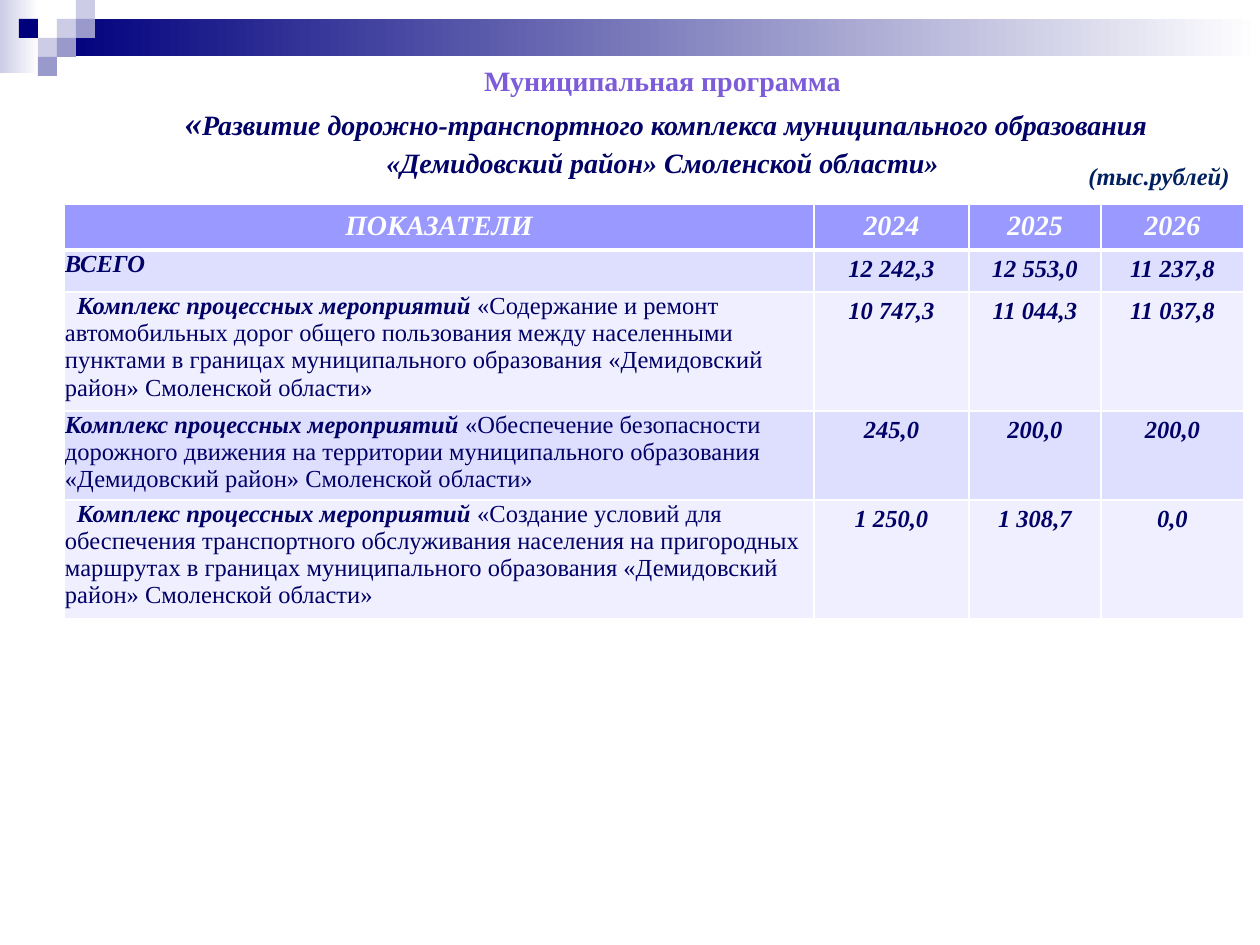
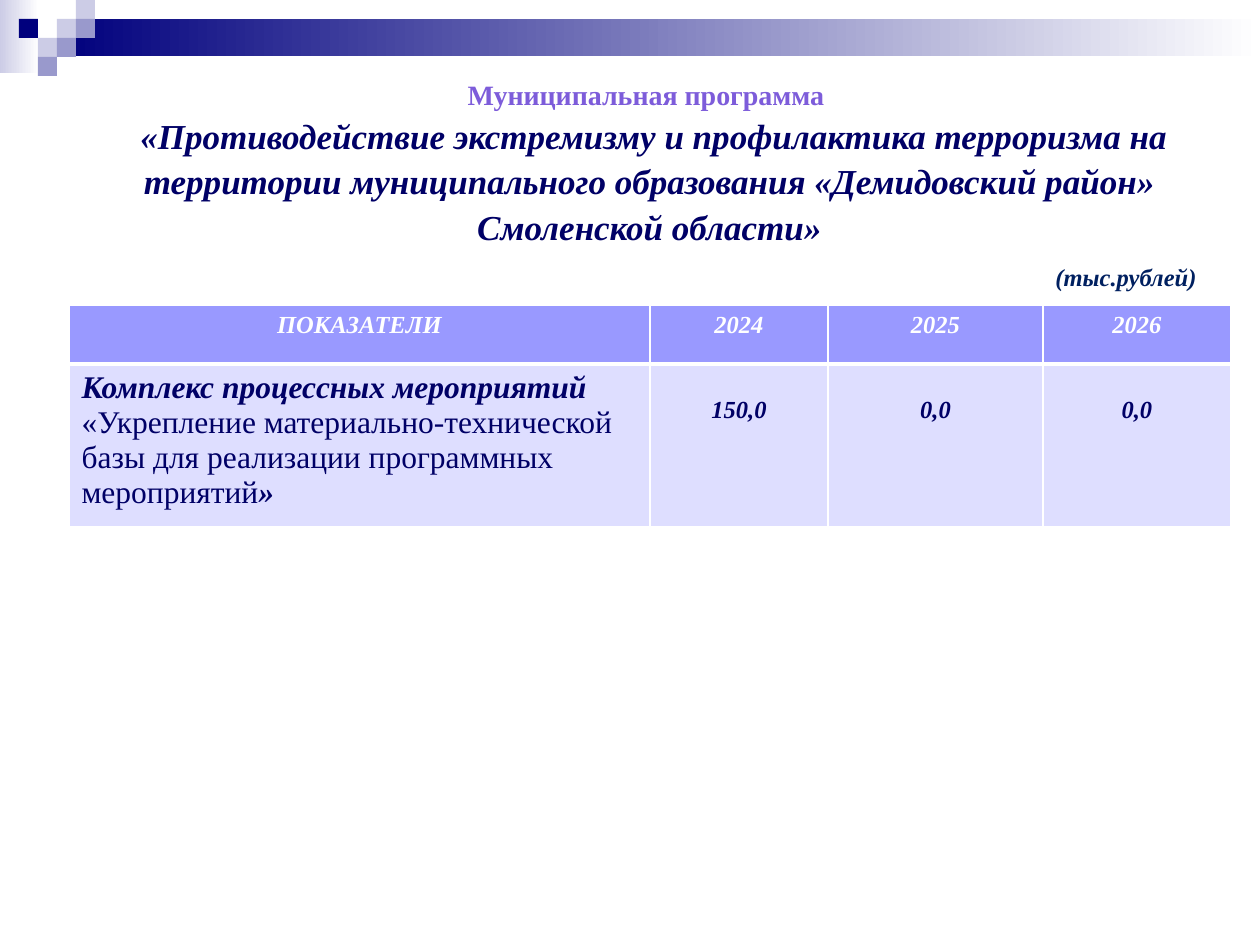
import pptx
import pptx.util
import pptx.dml.color
import pptx.enum.shapes
import pptx.enum.text
import pptx.oxml.ns
import lxml.etree

HUES = {
    "navy": "00007D", "pale": "CCCCE6", "mid": "9999CC", "white": "FFFFFF",
    "violet": "7D5CDA", "ink": "000066", "unit": "002060",
    "head": "9999FF", "odd": "DEDEFF", "even": "EFEFFF",
}
FONT = "Times New Roman"
YEARS = ["2024", "2025", "2026"]
KIND = "Комплекс процессных мероприятий "
CELL = 19
TILES = [(3, 1, "pale"), (4, 0, "pale"), (4, 1, "mid"), (2, 2, "pale"),
         (1, 1, "navy"), (3, 2, "mid"), (2, 3, "mid")]
CENTER = pptx.enum.text.PP_ALIGN.CENTER


def px(num):
    """Turn px into EMU."""
    return pptx.util.Emu(round(num * 914400 / 126))


def rgb(name):
    """Look up a colour by name."""
    return pptx.dml.color.RGBColor.from_string(HUES[name])


def write(par, text, size, hue, bold=True, slant=True):
    """Add one formatted run to a paragraph."""
    run = par.add_run()
    run.text = text
    font = run.font
    font.name, font.size = FONT, pptx.util.Pt(size)
    font.bold, font.italic = bold, slant
    font.color.rgb = rgb(hue)


def block(slide, left, top, wide, high, hue, fade=False):
    """Draw a plain or fading rectangle."""
    form = pptx.enum.shapes.MSO_SHAPE.RECTANGLE
    shape = slide.shapes.add_shape(form, px(left), px(top), px(wide), px(high))
    shape.shadow.inherit = False
    shape.line.fill.background()
    if fade:
        shape.fill.gradient()
        shape.fill.gradient_angle = 0
        for stop, name in zip(shape.fill.gradient_stops, (hue, "white")):
            stop.color.rgb = rgb(name)
    else:
        shape.fill.solid()
        shape.fill.fore_color.rgb = rgb(hue)


def band(slide):
    """Draw the top band with its mosaic."""
    block(slide, 0, 0, 39, 73, "pale", True)
    block(slide, 57, 19, 1203, 37, "navy", True)
    for col, row, hue in TILES:
        block(slide, col * CELL, row * CELL, CELL, CELL, hue)


def title(slide, left, top, wide, high, parts):
    """Fill the title with the heading and the programme name."""
    shape = slide.shapes.title
    shape.left, shape.top = px(left), px(top)
    shape.width, shape.height = px(wide), px(high)
    frame = shape.text_frame
    frame.word_wrap = True
    frame.auto_size = pptx.enum.text.MSO_AUTO_SIZE.NONE
    frame.vertical_anchor = pptx.enum.text.MSO_ANCHOR.TOP
    frame.margin_top = frame.margin_bottom = px(6)
    write(frame.paragraphs[0], "Муниципальная программа ", 16, "violet", slant=False)
    name = frame.add_paragraph()
    for text, size in parts:
        write(name, text, size, "ink")
    for par in frame.paragraphs:
        par.alignment = CENTER
        par.line_spacing = 1.08
        par.space_before = pptx.util.Pt(0)


def unit(slide, left, top):
    """Place the unit label."""
    box = slide.shapes.add_textbox(px(left), px(top), px(168), px(43))
    box.text_frame.word_wrap = False
    write(box.text_frame.paragraphs[0], "(тыс.рублей)", 14, "unit")


def edge(cell, base):
    """Give a cell its white borders."""
    props = cell._tc.get_or_add_tcPr()
    name = pptx.oxml.ns.qn
    for side in "LRTB":
        width = base if side == "B" else 1
        line = lxml.etree.SubElement(props, name("a:ln" + side), w=str(width * 12700))
        fill = lxml.etree.SubElement(line, name("a:solidFill"))
        lxml.etree.SubElement(fill, name("a:srgbClr"), val=HUES["white"])


def paint(cell, row):
    """Set the borders and fill of a cell by its row."""
    edge(cell, 1 if row else 3)
    cell.fill.solid()
    hue = ("odd" if row % 2 else "even") if row else "head"
    cell.fill.fore_color.rgb = rgb(hue)


def label(cell, parts, size, indent, flush):
    """Write a row label, bold and plain by turns."""
    par = cell.text_frame.paragraphs[0]
    for num, text in enumerate(parts):
        strong = num % 2 == 0
        write(par, text, size, "ink", strong, strong)
    if indent:
        par._p.get_or_add_pPr().set("indent", str(px(indent)))
    if flush:
        cell.margin_left = cell.margin_right = cell.margin_top = px(1)
        cell.margin_bottom = 0


def grid(slide, left, top, cols, highs, rows, sizes, flush=False, drop=6):
    """Build the table of indicators by year."""
    head, main = sizes
    frame = slide.shapes.add_table(len(highs), len(cols), px(left), px(top),
                                   px(sum(cols)), px(sum(highs)))
    table = frame.table
    for col, wide in zip(table.columns, cols):
        col.width = px(wide)
    for row, high in zip(table.rows, highs):
        row.height = px(high)
    for cell, text in zip(table.rows[0].cells, ["ПОКАЗАТЕЛИ"] + YEARS):
        paint(cell, 0)
        par = cell.text_frame.paragraphs[0]
        par.alignment = CENTER
        write(par, text, head, "white")
    for num, (parts, indent, sums) in enumerate(rows, 1):
        first, *rest = table.rows[num].cells
        paint(first, num)
        label(first, parts, main, indent, flush)
        for cell, text in zip(rest, sums):
            paint(cell, num)
            cell.margin_top = px(drop)
            par = cell.text_frame.paragraphs[0]
            par.alignment = CENTER
            write(par, text, 14, "ink")


def page(deck):
    """Add a slide with the shared band."""
    slide = deck.slides.add_slide(deck.slide_layouts[5])
    band(slide)
    return slide


def roads(deck):
    """Build the slide on roads and transport."""
    slide = page(deck)
    title(slide, 125, 55, 1082, 123, [
        ("«", 20),
        ("Развитие дорожно-транспортного комплекса муниципального образования "
         "«Демидовский район» Смоленской области» ", 16)])
    rows = [
        (["ВСЕГО"], 0, ["12 242,3", "12 553,0", "11 237,8"]),
        ([KIND, "«Содержание и ремонт автомобильных дорог общего пользования "
          "между населенными пунктами в границах муниципального образования "
          "«Демидовский район» Смоленской области»"], 12,
         ["10 747,3", "11 044,3", "11 037,8"]),
        ([KIND, "«Обеспечение безопасности дорожного движения на территории "
          "муниципального образования «Демидовский район» Смоленской области»"], 0,
         ["245,0", "200,0", "200,0"]),
        ([KIND, "«Создание условий для обеспечения транспортного обслуживания "
          "населения на пригородных маршрутах в границах муниципального "
          "образования «Демидовский район» Смоленской области»"], 12,
         ["1 250,0", "1 308,7", "0,0"]),
    ]
    grid(slide, 64, 204, [750, 155, 132, 143], [46, 42, 119, 89, 119], rows,
         (16, 14), flush=True)
    unit(slide, 1076, 155)


def safety(deck):
    """Build the slide on countering extremism."""
    slide = page(deck)
    title(slide, 39, 69, 1221, 217, [
        (" «Противодействие экстремизму и профилактика терроризма на территории "
         "муниципального образования «Демидовский район» Смоленской области»", 20)])
    rows = [([KIND, "«Укрепление материально-технической базы для реализации "
              "программных мероприятий", "»"], 0, ["150,0", "0,0", "0,0"])]
    grid(slide, 69, 305, [581, 178, 215, 188], [59, 163], rows, (14, 18), drop=33)
    unit(slide, 1043, 256)


def main():
    """Build and save the deck."""
    deck = pptx.Presentation()
    deck.slide_width, deck.slide_height = px(1260), px(945)
    roads(deck)
    safety(deck)
    deck.save("out.pptx")


if __name__ == "__main__":
    main()
